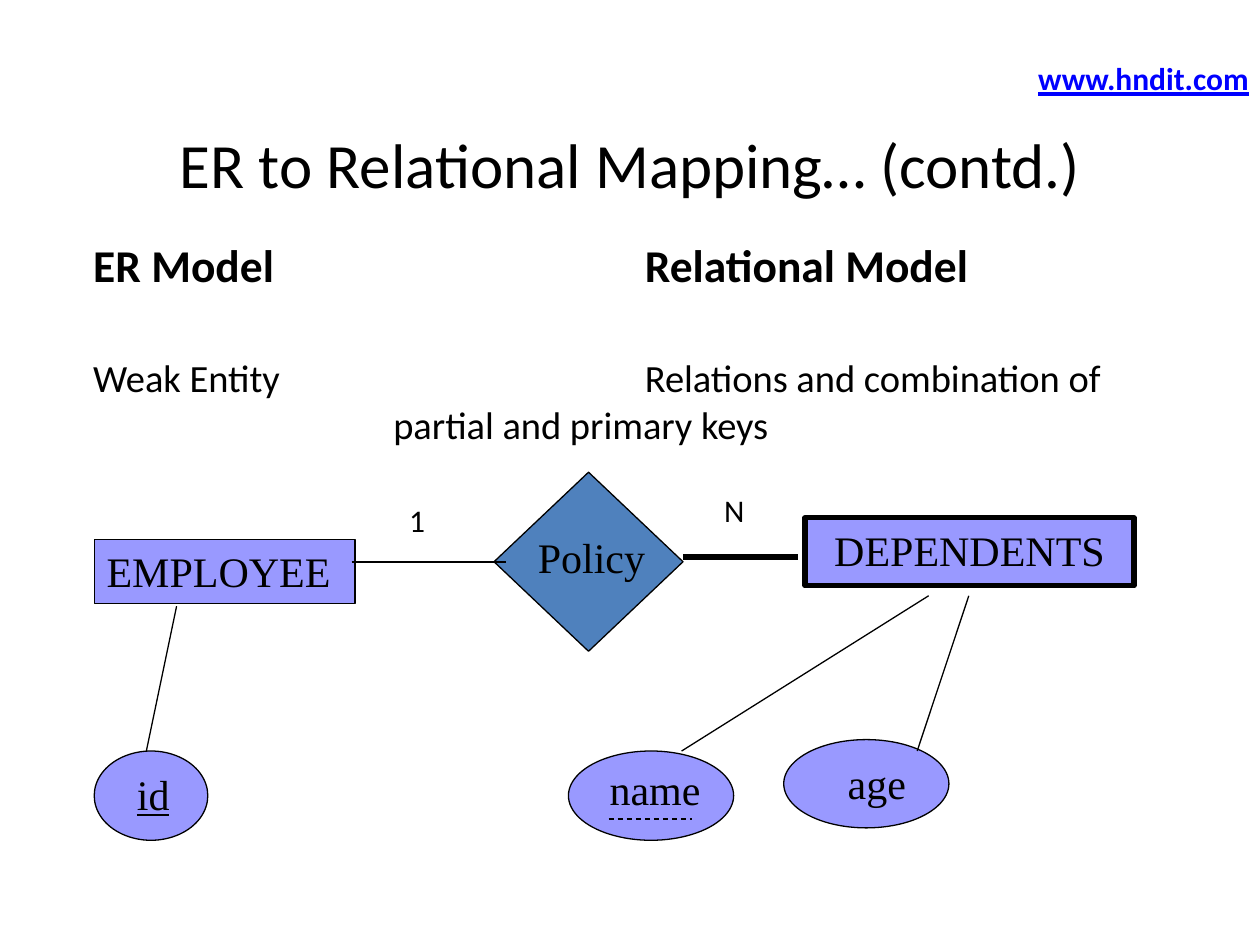
from pptx import Presentation
from pptx.dml.color import RGBColor
from pptx.enum.dml import MSO_LINE
from pptx.enum.shapes import MSO_CONNECTOR, MSO_SHAPE as Kind
from pptx.enum.text import MSO_ANCHOR as Anchor, PP_ALIGN as Align
from pptx.oxml.ns import qn
from pptx.util import Cm, Pt
from lxml.etree import SubElement

BLACK = RGBColor(0, 0, 0)
LINK = RGBColor(0, 0, 255)
STEEL = RGBColor(0x4F, 0x81, 0xBD)
LILAC = RGBColor(0x99, 0x99, 0xFF)
SANS, SERIF = "Calibri", "Times New Roman"

# Content: boxes are left, top, width, height in cm
TITLE = "ER to Relational Mapping… (contd.)"
BODY = [  # text, format, indent in cm
    ("ER Model\tRelational Model", dict(size=26, bold=True), 0),
    ("Weak Entity\tRelations and combination of", dict(size=22, before=36), 0),
    ("partial and primary keys", dict(size=22), 6.05),
]
COLUMN = 11.12  # tab stop of the second column

SHAPES = [  # kind, box, fill, line width, text, alignment
    (Kind.DIAMOND, (9.96, 9.52, 3.81, 3.61), STEEL, 0.75, "", None),
    (Kind.OVAL, (15.8, 14.91, 3.33, 1.78), LILAC, 0.75, "", None),
    (Kind.OVAL, (11.46, 15.14, 3.33, 1.8), LILAC, 0.75, "", None),
    (Kind.OVAL, (1.9, 15.14, 2.29, 1.8), LILAC, 0.75, "", None),
    (Kind.RECTANGLE, (1.9, 10.87, 5.26, 1.3), LILAC, 0.75, "EMPLOYEE", Align.LEFT),
    (Kind.RECTANGLE, (16.23, 10.44, 6.63, 1.37), LILAC, 3, "DEPENDENTS", Align.CENTER),
]
LINES = [  # start, end, width, dashed
    ((7.09, 11.33), (10.21, 11.33), 0.75, False),  # employee - policy
    ((13.77, 11.23), (16.08, 11.23), 3, False),    # policy - dependents
    ((2.95, 15.14), (3.56, 12.22), 0.75, False),   # id - employee
    ((13.74, 15.14), (18.72, 12.01), 0.75, False),  # name - dependents
    ((18.49, 15.14), (19.53, 12.01), 0.75, False),  # age - dependents
    ((12.27, 16.51), (13.94, 16.51), 0.75, True),  # partial key mark
]
LABELS = [  # text, box, format
    ("Policy", (10.59, 10.59, 2.67, 2.29), dict(font=SERIF, align=Align.CENTER)),
    ("name", (12.04, 15.27, 2.34, 1.27), dict(font=SERIF)),
    ("age", (16.84, 15.14, 1.68, 1.27), dict(font=SERIF)),
    ("id", (2.51, 15.37, 1.17, 1.27), dict(font=SERIF, under=True)),
    ("1", (8, 9.98, 0.91, 1.09), dict(size=18)),
    ("N", (14.35, 9.78, 1.02, 1.09), dict(size=18)),
    ("www.hndit.com", (20.68, 1.07, 4.78, 1.02),
     dict(size=18, bold=True, under=True, color=LINK)),
]


def cm(nums):
    return [Cm(n) for n in nums]


def write(para, text, size=24, font=SANS, color=BLACK, bold=False,
          under=False, align=Align.LEFT, before=0):
    para.alignment = align
    para.space_before = Pt(before)
    run = para.add_run()
    run.text = text
    face = run.font
    face.name, face.size, face.bold = font, Pt(size), bold
    face.underline = under
    face.color.rgb = color


def add_body(slide):
    frame = slide.shapes.add_textbox(*cm((1.63, 4.65, 22.43, 5.92))).text_frame
    frame.word_wrap = True
    for i, (text, form, indent) in enumerate(BODY):
        para = frame.add_paragraph() if i else frame.paragraphs[0]
        props = para._p.get_or_add_pPr()
        props.set("marL", str(Cm(indent)))
        if "\t" in text:
            tabs = SubElement(props, qn("a:tabLst"))
            SubElement(tabs, qn("a:tab"), pos=str(Cm(COLUMN)), algn="l")
        write(para, text, **form)


def add_shape(slide, kind, box, fill, width, text, align):
    shape = slide.shapes.add_shape(kind, *cm(box))
    shape.shadow.inherit = False
    shape.fill.solid()
    shape.fill.fore_color.rgb = fill
    shape.line.color.rgb = BLACK
    shape.line.width = Pt(width)
    if text:
        shape.text_frame.vertical_anchor = Anchor.TOP
        write(shape.text_frame.paragraphs[0], text, font=SERIF, align=align)


def add_line(slide, start, end, width, dashed):
    line = slide.shapes.add_connector(MSO_CONNECTOR.STRAIGHT, *cm(start + end))
    line.line.color.rgb = BLACK
    line.line.width = Pt(width)
    if dashed:
        line.line.dash_style = MSO_LINE.DASH
    SubElement(line._element.spPr, qn("a:effectLst"))


def main():
    deck = Presentation()
    deck.slide_width, deck.slide_height = Cm(25.4), Cm(19.05)
    slide = deck.slides.add_slide(deck.slide_layouts[5])

    # Title and two-column text
    title = slide.shapes.title
    title.left, title.top, title.width, title.height = cm((1.27, 1.7, 22.86, 3.18))
    title.text_frame.vertical_anchor = Anchor.MIDDLE
    write(title.text_frame.paragraphs[0], TITLE, size=36, align=Align.CENTER)
    add_body(slide)

    # Diagram
    for item in SHAPES:
        add_shape(slide, *item)
    for item in LINES:
        add_line(slide, *item)
    for text, box, form in LABELS:
        frame = slide.shapes.add_textbox(*cm(box)).text_frame
        frame.word_wrap = False
        write(frame.paragraphs[0], text, **form)

    deck.save("out.pptx")


if __name__ == "__main__":
    main()
